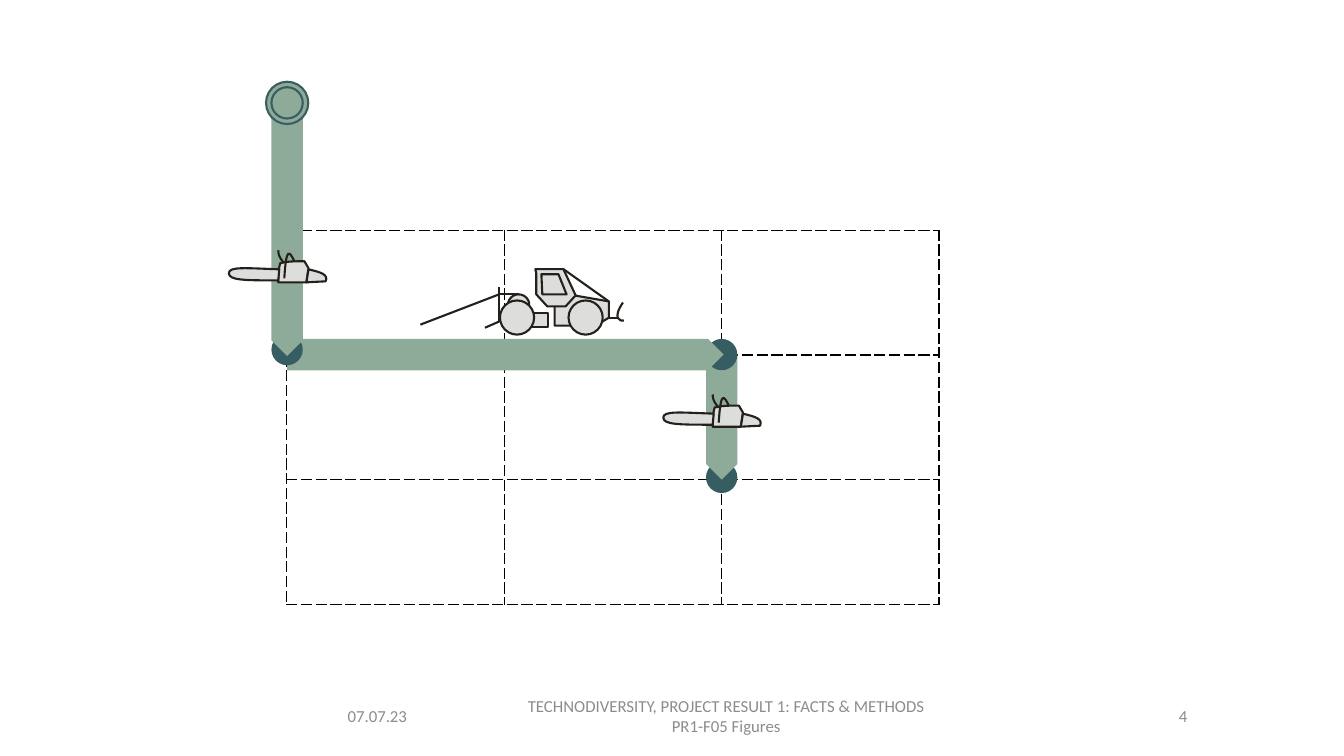
from lxml import etree
from pptx import Presentation
from pptx.dml.color import RGBColor as RGB
from pptx.enum.shapes import MSO_CONNECTOR as Conn, MSO_SHAPE as Kind
from pptx.enum.text import MSO_ANCHOR as Anchor, PP_ALIGN as Align
from pptx.oxml import parse_xml
from pptx.oxml.ns import qn
from pptx.util import Pt

GREEN = RGB(0x8E, 0xAB, 0x99)
TEAL = RGB(0x35, 0x5D, 0x62)
RING = RGB(0x39, 0x5D, 0x61)
STEEL = RGB(0xDD, 0xDD, 0xDC)
INK = RGB(0x24, 0x21, 0x1D)
GREY = RGB(0x8C, 0x8C, 0x8C)
DRAW = "http://schemas.openxmlformats.org/drawingml/2006/main"
BAND = 22.4  # width of a route band and of its dots


def paint(shape, fill=None, line=None):
    shape.shadow.inherit = False
    if fill is None:
        shape.fill.background()
    else:
        shape.fill.solid()
        shape.fill.fore_color.rgb = fill
    if line is None:
        shape.line.fill.background()
    else:
        shape.line.color.rgb = line
        shape.line.width = Pt(1.5)


def form(shapes, kind, left, top, width, height, fill, line=None):
    shape = shapes.add_shape(kind, Pt(left), Pt(top), Pt(width), Pt(height))
    paint(shape, fill, line)
    return shape


def disc(shapes, x, y, size, fill, line=None):
    """Circle around its centre."""
    form(shapes, Kind.OVAL, x - size / 2, y - size / 2, size, size, fill, line)


def band(shapes, x, y, length, down=False):
    """Route band that starts at (x, y) and runs right or down."""
    if down:
        x, y = x - length / 2, y + length / 2
    plate = form(shapes, Kind.PENTAGON, x, y - BAND / 2, length, BAND, GREEN)
    plate.rotation = 90 if down else 0


def outline(shapes, left, top, start, *legs, shut=True):
    """Outline of points (x, y) and of cubic curves (three points)."""
    points = [start]
    for leg in legs:
        points += leg if len(leg) == 3 else [leg]
    spots = [(Pt(left + x), Pt(top + y)) for x, y in points]
    maker = shapes.build_freeform(*spots[0], scale=1.0)
    maker.add_line_segments(spots[1:], close=shut)
    shape = maker.convert_to_shape()
    # Join the three points of each curve into one cubic segment
    parts = shape._element.iter(qn("a:lnTo"))
    parts = iter(list(parts))
    for leg in legs:
        bend = next(parts)
        if len(leg) == 3:
            bend.tag = qn("a:cubicBezTo")
            for extra in (next(parts), next(parts)):
                bend.append(extra[0])
                extra.getparent().remove(extra)
    paint(shape, STEEL if shut else None, INK)


def stroke(shapes, left, top, x1, y1, x2, y2):
    line = shapes.add_connector(Conn.STRAIGHT, Pt(left + x1), Pt(top + y1),
                                Pt(left + x2), Pt(top + y2))
    line.line.color.rgb = INK
    line.line.width = Pt(1.5)
    etree.SubElement(line._element.spPr, qn("a:effectLst"))


def text(slide, words, left, top, width, height, align=Align.LEFT,
         size=12, color=GREY, face="Calibri"):
    frame = slide.shapes.add_textbox(Pt(left), Pt(top), Pt(width), Pt(height)).text_frame
    frame.word_wrap = True
    frame.vertical_anchor = Anchor.MIDDLE
    frame.text = words
    for para in frame.paragraphs:
        para.alignment = align
        para.font.size = Pt(size)
        para.font.name = face
        para.font.color.rgb = color


def edge(cell, sides):
    """Dash the given sides of a cell and clear the others."""
    cell.fill.background()
    for i, side in enumerate("LRTB"):
        look = ('<a:solidFill><a:srgbClr val="000000"/></a:solidFill><a:prstDash val="dash"/>'
                if side in sides else "<a:noFill/>")
        cell._tc.get_or_add_tcPr().insert(i, parse_xml(
            f'<a:ln{side} xmlns:a="{DRAW}" w="{Pt(1)}">{look}</a:ln{side}>'))


def grid(slide, left, top, width, height, rows=4, cols=3):
    table = slide.shapes.add_table(rows, cols, Pt(left), Pt(top), Pt(width), Pt(height)).table
    table.first_row = table.horz_banding = False
    for r in range(rows):
        for c in range(cols):
            # The top row is open, apart from its left and lower edges
            sides = "LRTB" if r else "B" if c else "LB"
            edge(table.cell(r, c), sides)


def route(slide, left, top, width, height):
    """Three bands with end dots, and a ring at the start."""
    shapes = slide.shapes
    right, turn = left + width, top + 179.8
    disc(shapes, right, top + height, BAND, TEAL)
    band(shapes, right, turn, 89.3, down=True)
    disc(shapes, right, turn, BAND, TEAL)
    band(shapes, left, turn, 311.8)
    disc(shapes, left, turn - 3.6, BAND, TEAL)
    band(shapes, left, top + 4.4, 176.4, down=True)
    ring = shapes.add_group_shape().shapes
    for size in (30.2, BAND):
        disc(ring, left, top, size, GREEN, RING)


def saw(slide, left, top):
    at = slide.shapes.add_group_shape().shapes, left, top
    # Motor and rear handle
    outline(*at, (35.3, 25.9), (55.4, 25.9), (56.9, 15.8), (54, 10.8),
            ((47.5, 10.8), (41.8, 10.8), (36.7, 12.2)),
            ((35.3, 16.6), (35.3, 20.9), (35.3, 25.9)))
    outline(*at, (55.4, 25.9), (69.1, 25.2), ((71.3, 20.2), (65.5, 18.7), (56.9, 16.6)))
    # Front grip and guard
    outline(*at, (46.8, 10.8), ((43.2, 3.6), (41, 0), (39.6, 23)), shut=False)
    outline(*at, (38.9, 11.5), ((35.3, 7.2), (35.3, 5), (35.3, 2.9)), shut=False)
    # Blade
    outline(*at, (35.3, 24.5), ((11.5, 24.5), (0, 24.5), (0, 19.4)),
            ((0, 14.4), (12.2, 15.8), (36, 16.6)))


def skidder(slide, left, top):
    at = shapes, *_ = slide.shapes.add_group_shape().shapes, left, top
    # Winch drum and frame
    form(shapes, Kind.OVAL, left + 62.6, top + 18, 15.1, 14.4, STEEL, INK)
    form(shapes, Kind.RECTANGLE, left + 60.5, top + 31, 31, 10.1, STEEL, INK)
    # Hood, wheels, cab and window
    outline(*at, (95.8, 18), (95.8, 40.3), (125.3, 40.3), (134.6, 34.6),
            (134.6, 23), (105.8, 18))
    for x in (118, 69):
        disc(shapes, left + x, top + 34.5, 24.4, STEEL, INK)
    outline(*at, (82.8, 2.9), (82.8, 18), (90.7, 26.6), (103.7, 26.6),
            (110.9, 18.7), (102.2, 0), (82.1, 0))
    outline(*at, (86.4, 3.6), (87.1, 18), (104.4, 18), (98.6, 3.6))
    # Guard bar, rear shield, cable and front arm
    for ends in ((102.2, 0, 134.6, 23), (56.2, 37.4, 46.1, 41.8), (56.2, 18, 0, 39.6),
                 (56.2, 13, 56.2, 37.4), (70.6, 18, 56.9, 18), (134.6, 34.6, 141.1, 34.6)):
        stroke(*at, *ends)
    outline(*at, (144.7, 23.8), ((136.8, 35.3), (142.6, 37.4), (145.4, 36.7)), shut=False)


def footer(slide, top, height):
    text(slide, "07.07.23", 241.2, top, 96.5, height)
    text(slide, "TECHNODIVERSITY, PROJECT RESULT 1: FACTS & METHODS\nPR1-F05 Figures",
         349.9, top, 337.7, height, align=Align.CENTER)
    text(slide, "4", 703.4, top, 151.9, height, align=Align.RIGHT)


def main():
    deck = Presentation()
    deck.slide_width, deck.slide_height = Pt(960), Pt(540)
    slide = deck.slides.add_slide(deck.slide_layouts[6])
    footer(slide, 496.8, 28.8)
    grid(slide, 204.9, 75.4, 465.9, 356.4)
    route(slide, 205.1, 73.5, 310.4, 267.5)
    saw(slide, 163.5, 175.8)
    saw(slide, 473.8, 278.9)
    skidder(slide, 300.3, 192.3)
    deck.save("out.pptx")


if __name__ == "__main__":
    main()
